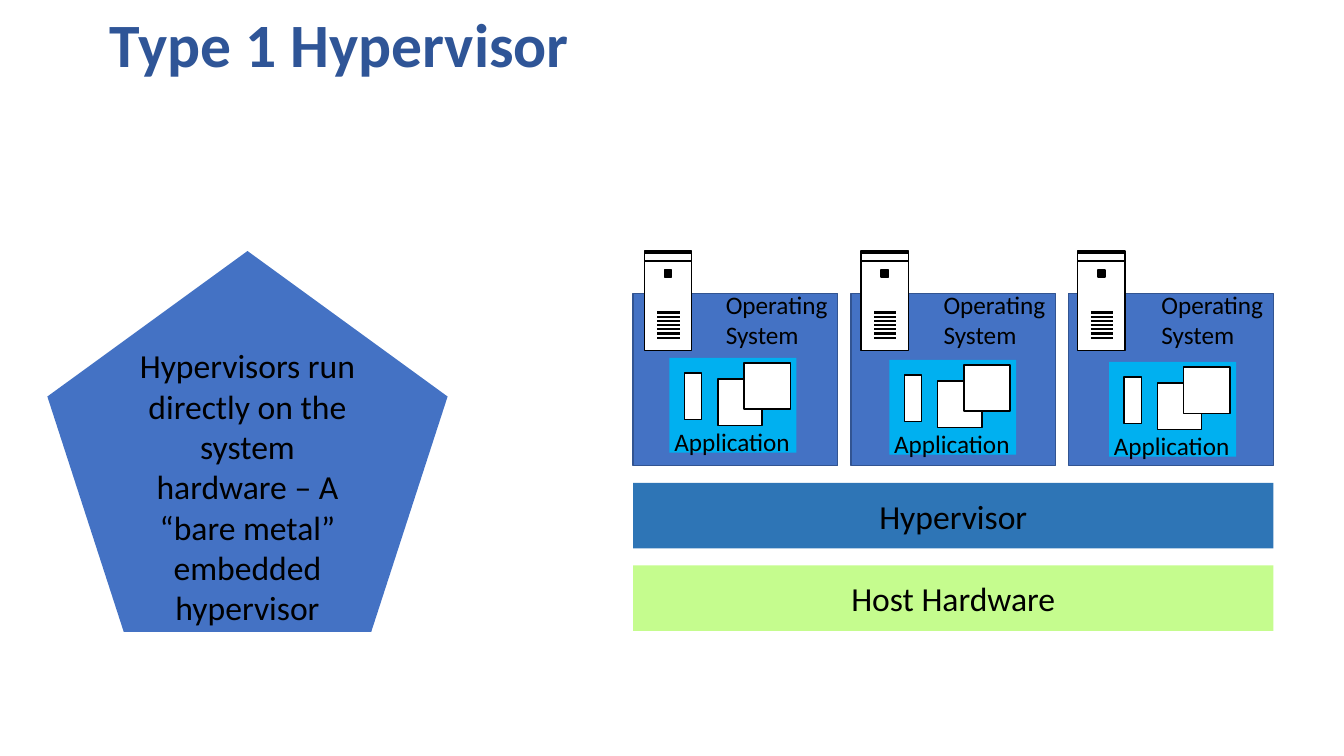
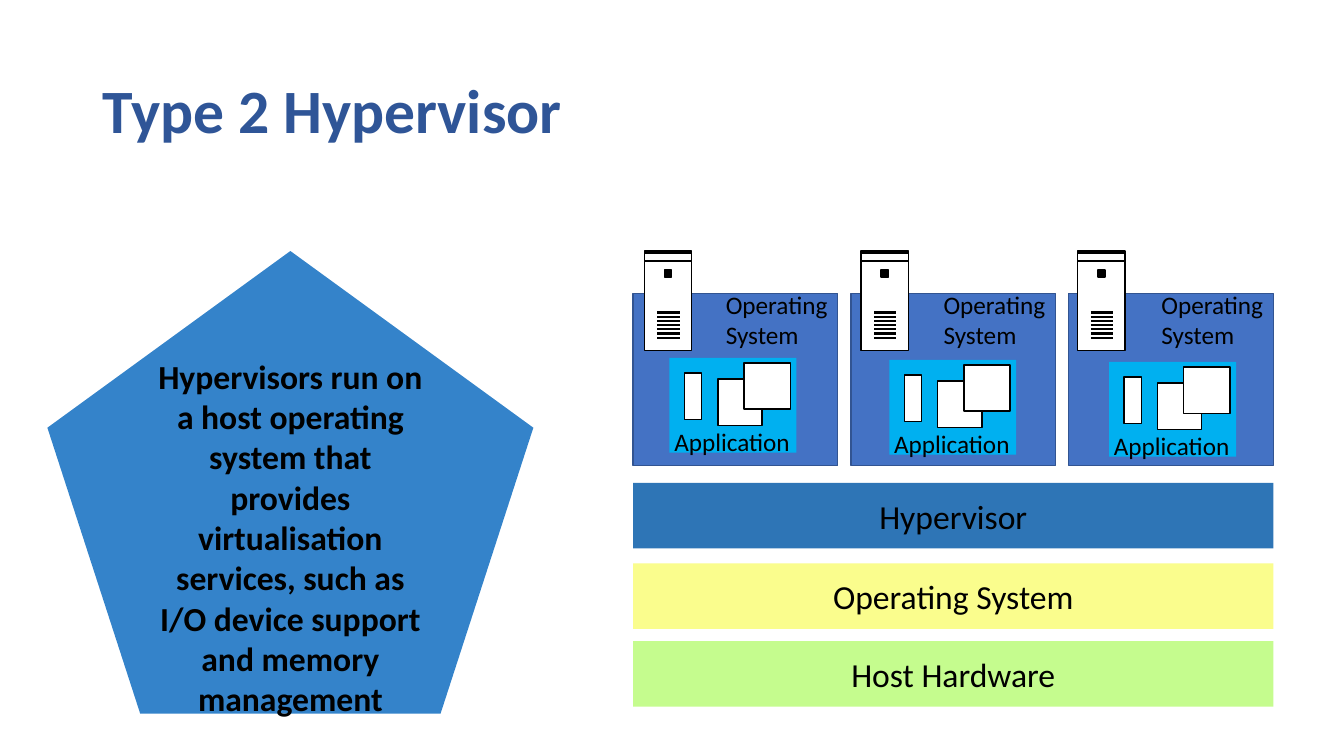
import pptx
import pptx.dml.color
import pptx.enum.shapes
import pptx.enum.text
import pptx.oxml.ns
import pptx.util
from lxml import etree

Inches, Pt = pptx.util.Inches, pptx.util.Pt
RGB = pptx.dml.color.RGBColor.from_string
SHAPE = pptx.enum.shapes.MSO_SHAPE
ALIGN, ANCHOR = pptx.enum.text.PP_ALIGN, pptx.enum.text.MSO_ANCHOR
FIT = pptx.enum.text.MSO_AUTO_SIZE.SHAPE_TO_FIT_TEXT

THEME = {
    "font": "Calibri",
    "title": "2F5597", "ink": "000000", "paper": "FFFFFF",
    "guest": "4472C4", "guest_edge": "325491", "app": "00B0F0",
    "hypervisor": "2E75B6", "os": "FAFD8D", "hardware": "C5FC8E",
    "note_1": "4472C4", "note_2": "3483CA",
    "title_size": 44, "body_size": 24, "label_size": 18,
}

SLIDES = [
    {"title": "Type 1 Hypervisor", "title_box": (0.99, -0.25, 12.68, 1.45),
     "note": "Hypervisors run directly on the system hardware – A “bare metal” embedded hypervisor",
     "note_box": (0.47, 2.49, 3.97, 3.78), "note_fill": "note_1", "bold": False,
     "layers": [("Hypervisor", 4.79, "hypervisor"), ("Host Hardware", 5.61, "hardware")]},
    {"title": "Type 2 Hypervisor", "title_box": (0.92, 0.4, 11.5, 1.45),
     "note": "Hypervisors run on a host operating system that provides virtualisation services, "
             "such as I/O device support and memory management",
     "note_box": (0.47, 2.49, 4.82, 4.59), "note_fill": "note_2", "bold": True,
     "layers": [("Hypervisor", 4.79, "hypervisor"), ("Operating System", 5.59, "os"),
                ("Host Hardware", 6.36, "hardware")]},
]


def write(sp, lines, size="body_size", color="ink", bold=False, align=ALIGN.CENTER,
          spacing=None, wrap=True):
    tf = sp.text_frame
    tf.word_wrap = wrap
    for i, line in enumerate(lines):
        p = tf.paragraphs[0] if i == 0 else tf.add_paragraph()
        p.alignment, p.line_spacing = align, spacing
        r = p.add_run()
        r.text = line
        r.font.color.rgb = RGB(THEME[color])
        for name, value in {"name": THEME["font"], "size": Pt(THEME[size]), "bold": bold}.items():
            setattr(r.font, name, value)
    return tf


def box(shapes, at, fill, edge=None, kind=SHAPE.RECTANGLE):
    sp = shapes.add_shape(kind, *map(Inches, at))
    sp.shadow.inherit = False
    sp.fill.solid()
    sp.fill.fore_color.rgb = RGB(THEME[fill])
    if edge:
        sp.line.color.rgb = RGB(THEME[edge])
        sp.line.width = Pt(1)
    else:
        sp.line.fill.background()
    return sp


prs = pptx.Presentation()
prs.slide_width, prs.slide_height = Inches(13.33), Inches(7.5)

for spec_row in SLIDES:
    s = prs.slides.add_slide(prs.slide_layouts[6])

    # Title
    sp = s.shapes.add_textbox(*map(Inches, spec_row["title_box"]))
    tf = write(sp, [spec_row["title"]], "title_size", "title", True, ALIGN.LEFT, 0.9)
    tf.vertical_anchor = ANCHOR.MIDDLE

    # Explanation in the pentagon
    sp = box(s.shapes, spec_row["note_box"], spec_row["note_fill"], kind=SHAPE.REGULAR_PENTAGON)
    write(sp, [spec_row["note"]], bold=spec_row["bold"])

    # Layers under the virtual machines
    for label, top, fill in spec_row["layers"]:
        write(box(s.shapes, (6.28, top, 6.35, 0.65), fill), [label])

    # Virtual machines
    for i in range(3):
        vm = s.shapes.add_group_shape().shapes
        guest_x = 6.28 + 2.16 * i
        app_x, app_y = 6.64 + 2.18 * i, 3.55 + 0.02 * i
        server_x = 6.39 + 2.15 * i
        box(vm, (guest_x, 2.91, 2.03, 1.71), "guest", "guest_edge")

        # Application with its windows
        box(vm, (app_x, app_y, 1.26, 0.94), "app")
        for dx, dy, width in [(0.48, 0.21, 0.44), (0.74, 0.05, 0.46), (0.15, 0.15, 0.17)]:
            box(vm, (app_x + dx, app_y + dy, width, 0.46), "paper", "ink")

        # Labels
        for lines, at in [(["Application"], (app_x - 0.05, app_y + 0.63, 1.36, 0.4)),
                          (["Operating", "System"], (guest_x + 0.82, 2.82, 1.22, 0.71))]:
            sp = vm.add_textbox(*map(Inches, at))
            write(sp, lines, "label_size", align=ALIGN.LEFT, wrap=False).auto_size = FIT

        # Server tower: case, vents, power button, lid
        box(vm, (server_x, 2.49, 0.47, 0.99), "paper", "ink")
        for n in range(7):
            y = Inches(3.1 + 0.25 * n / 6)
            vent = vm.add_connector(pptx.enum.shapes.MSO_CONNECTOR.STRAIGHT,
                                    Inches(server_x + 0.13), y, Inches(server_x + 0.35), y)
            vent.line.color.rgb = RGB(THEME["ink"])
            vent.line.width = Pt(1.5)
            etree.SubElement(vent._element.spPr, pptx.oxml.ns.qn("a:effectLst"))
        box(vm, (server_x + 0.2, 2.68, 0.07, 0.07), "ink", "ink")
        box(vm, (server_x, 2.51, 0.47, 0.08), "paper", "ink")

prs.save("out.pptx")
